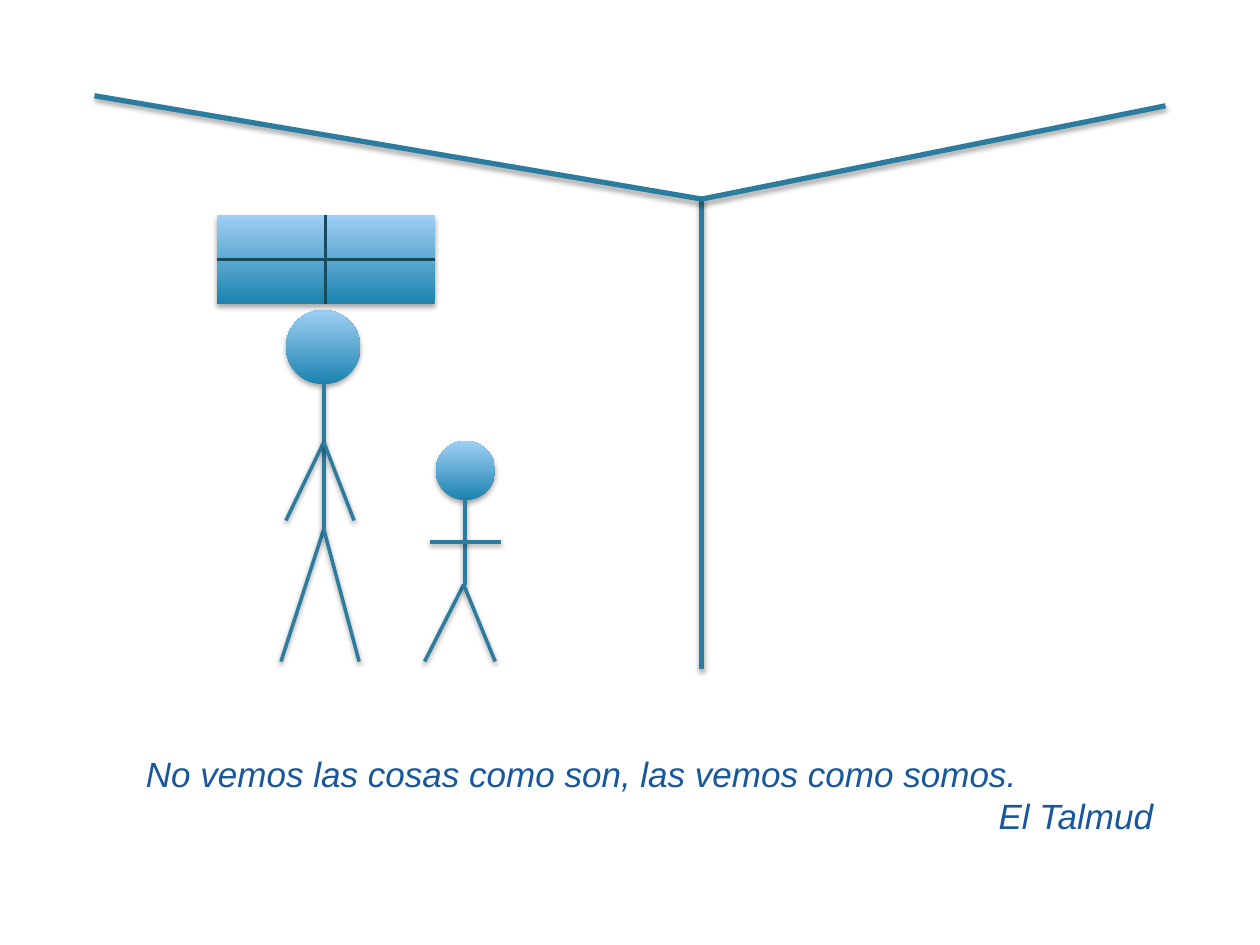
import pptx
import pptx.dml.color
import pptx.enum.shapes
import pptx.enum.text
import pptx.oxml
import pptx.oxml.ns
import pptx.util

Inches = pptx.util.Inches
Pt = pptx.util.Pt
SHAPE = pptx.enum.shapes.MSO_SHAPE
STRAIGHT = pptx.enum.shapes.MSO_CONNECTOR.STRAIGHT

DARK_BLUE, LIGHT_BLUE = "1B83B0", "A0CFF4"
STROKE_BLUE, FRAME_TEAL, QUOTE_BLUE = "2C7C9F", "184B5B", "18579B"

# Opacity in percent and offset in points
SOLID_SHADOW = (35, 1.8)
LIMB_SHADOW = (38, 1.6)

QUOTE_FONT = {"name": "Arial", "size": Pt(20), "italic": True}


def color(hex_value):
    return pptx.dml.color.RGBColor.from_string(hex_value)


def set_shadow(shape, shadow=None):
    """Give the shape a soft shadow straight below it, or none at all."""
    effects = pptx.oxml.parse_xml(f"<a:effectLst {pptx.oxml.ns.nsdecls('a')}/>")
    if shadow:
        opacity, offset = shadow
        effects.append(pptx.oxml.parse_xml(
            f"<a:outerShdw {pptx.oxml.ns.nsdecls('a')} blurRad='{Pt(3.1)}' "
            f"dist='{Pt(offset)}' dir='5400000' rotWithShape='0'>"
            f"<a:srgbClr val='000000'><a:alpha val='{opacity * 1000}'/></a:srgbClr>"
            "</a:outerShdw>"))
    shape._element.spPr.append(effects)


def add_stroke(shapes, start, end, width, stroke_color=STROKE_BLUE, shadow=None):
    points = [Inches(value) for value in (*start, *end)]
    stroke = shapes.add_connector(STRAIGHT, *points)
    stroke.line.width = Pt(width)
    stroke.line.color.rgb = color(stroke_color)
    set_shadow(stroke, shadow)
    return stroke


def add_gradient_shape(shapes, preset, left, top, width, height):
    """Add a borderless shape shaded from dark at the bottom to light at the top."""
    shape = shapes.add_shape(preset, *map(Inches, (left, top, width, height)))
    shape.fill.gradient()
    shape.fill.gradient_angle = 90
    for stop, position, shade in zip(shape.fill.gradient_stops, (0, 1),
                                     (DARK_BLUE, LIGHT_BLUE)):
        stop.position = position
        stop.color.rgb = color(shade)
    shape.line.fill.background()
    set_shadow(shape, SOLID_SHADOW)
    return shape


def add_figure(slide, left, top, head, limbs):
    """Draw a stick figure; head is (x, diameter), limbs are pairs of points."""
    head_x, diameter = head
    add_gradient_shape(slide.shapes, SHAPE.OVAL, left + head_x, top, diameter, diameter)
    for (x1, y1), (x2, y2) in limbs:
        add_stroke(slide.shapes, (left + x1, top + y1), (left + x2, top + y2),
                   2, shadow=LIMB_SHADOW)


def add_window(slide, left, top, width, height):
    window = slide.shapes.add_group_shape()
    pane = add_gradient_shape(window.shapes, SHAPE.RECTANGLE, left, top, width, height)
    center_x, center_y = left + width / 2, top + height / 2
    bars = (
        ((center_x, top), (center_x, top + height), 0, 2),
        ((left, center_y), (left + width, center_y), 1, 3),
    )
    for start, end, start_side, end_side in bars:
        bar = add_stroke(window.shapes, start, end, 1.5, FRAME_TEAL)
        bar.begin_connect(pane, start_side)
        bar.end_connect(pane, end_side)


def add_room_corner(slide, left, top):
    corner = (left + 4.82, top + 0.82)
    for x, y in ((4.82, 4.55), (0, 0), (8.5, 0.08)):
        add_stroke(slide.shapes, corner, (left + x, top + y), 3, shadow=SOLID_SHADOW)


def add_quote(slide, left, top, width, height):
    box = slide.shapes.add_textbox(*map(Inches, (left, top, width, height)))
    frame = box.text_frame
    frame.word_wrap = True
    frame.auto_size = pptx.enum.text.MSO_AUTO_SIZE.SHAPE_TO_FIT_TEXT
    frame.text = "No vemos las cosas como son, las vemos como somos.\nEl Talmud"
    for paragraph in frame.paragraphs:
        font = paragraph.runs[0].font
        for attribute, value in QUOTE_FONT.items():
            setattr(font, attribute, value)
        font.color.rgb = color(QUOTE_BLUE)
    frame.paragraphs[-1].alignment = pptx.enum.text.PP_ALIGN.RIGHT


def main():
    deck = pptx.Presentation()
    deck.slide_width, deck.slide_height = Inches(10), Inches(7.5)
    slide = deck.slides.add_slide(deck.slide_layouts[6])

    neck, shoulder, hip = (0.34, 0.59), (0.34, 1.05), (0.34, 1.74)
    add_figure(slide, 2.23, 2.46, (0.04, 0.59), (
        (neck, hip),
        (hip, (0, 2.79)), (hip, (0.62, 2.79)),
        (shoulder, (0.04, 1.67)), (shoulder, (0.58, 1.67)),
    ))
    child_hip = (0.31, 1.14)
    add_figure(slide, 3.37, 3.5, (0.09, 0.47), (
        ((0.32, 0.46), (0.32, 1.14)),
        (child_hip, (0, 1.75)), (child_hip, (0.56, 1.75)),
        ((0.04, 0.8), (0.61, 0.8)),
    ))
    add_window(slide, 1.72, 1.71, 1.73, 0.7)
    add_room_corner(slide, 0.75, 0.76)
    add_quote(slide, 1.06, 5.92, 8.19, 0.77)

    deck.save("out.pptx")


if __name__ == "__main__":
    main()
